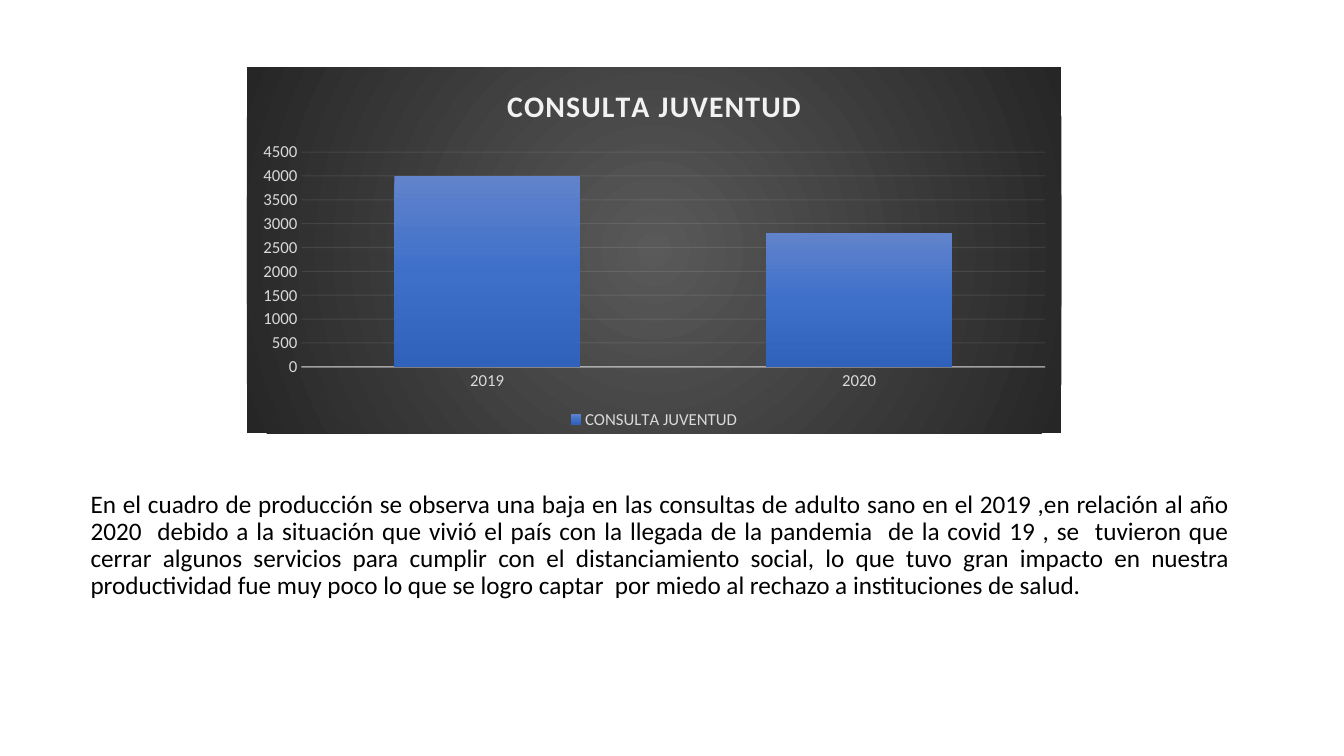
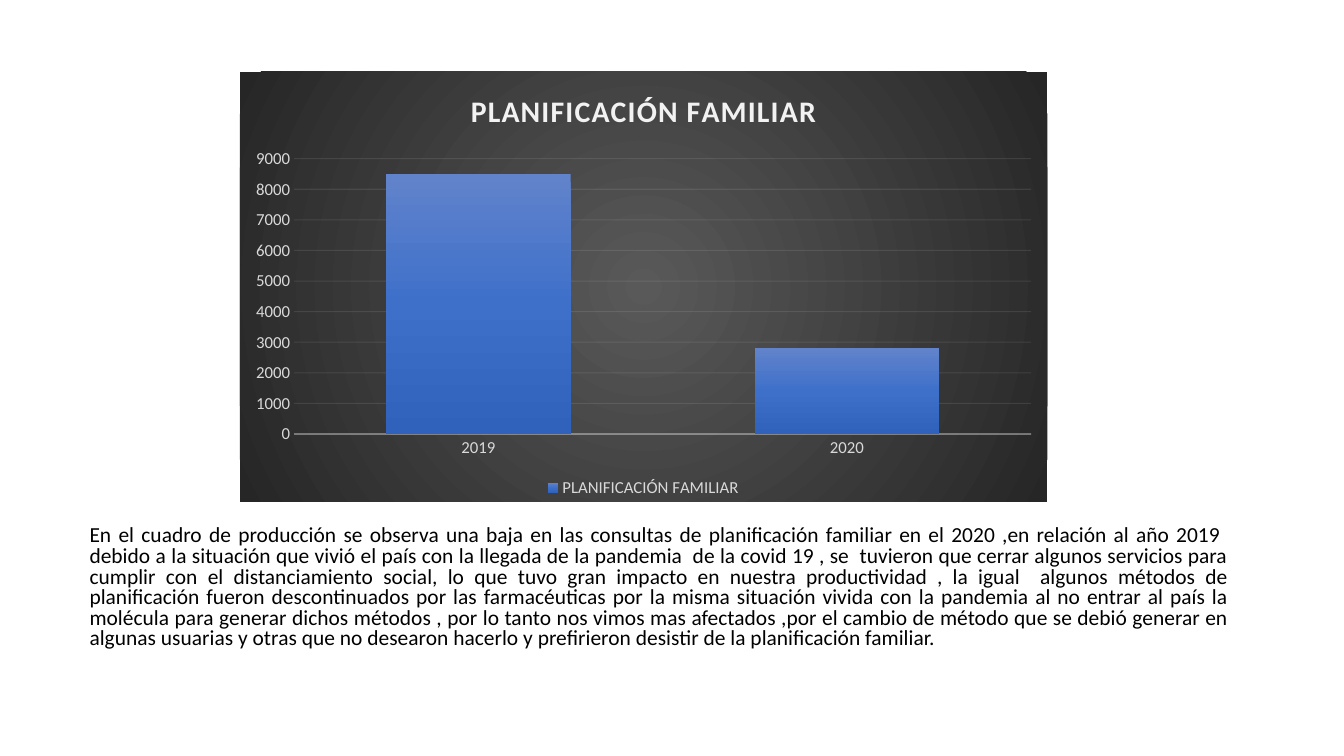
from lxml import etree
from pptx import Presentation
from pptx.chart.data import CategoryChartData
from pptx.dml.color import RGBColor
from pptx.enum.chart import XL_CHART_TYPE, XL_LEGEND_POSITION, XL_TICK_MARK
from pptx.enum.text import MSO_ANCHOR, PP_ALIGN
from pptx.oxml import parse_xml
from pptx.oxml.ns import nsdecls, qn
from pptx.util import Pt

COLUMNS = XL_CHART_TYPE.COLUMN_CLUSTERED
BOTTOM = XL_LEGEND_POSITION.BOTTOM
NO_TICK = XL_TICK_MARK.NONE
MIDDLE = MSO_ANCHOR.MIDDLE
JUSTIFY = PP_ALIGN.JUSTIFY

FONT = "Calibri"
COLORS = {
    "text": "000000",
    "label": "D9D9D9",
    "light": "F2F2F2",
    "panel_center": "595959",
    "panel_edge": "262626",
    "bar_top": "6183CB",
    "bar_middle": "3E70CA",
    "bar_bottom": "3062BB",
}
PANEL_STOPS = {0: "panel_center", 100: "panel_edge"}
PANEL_SHADE = (
    '<a:path path="circle">'
    '<a:fillToRect l="50000" t="50000" r="50000" b="50000"/></a:path>'
)
BAR_STOPS = {0: "bar_top", 50: "bar_middle", 100: "bar_bottom"}
BAR_SHADE = '<a:lin ang="5400000" scaled="0"/>'

SLIDES = [
    {
        "title": "CONSULTA JUVENTUD",
        "values": (4000, 2800),
        "maximum": 4500,
        "step": 500,
        "chart_at": (176.4, 48.2, 581.8, 261.4),
        "text_at": (57.6, 337.7, 828, 104.4),
        "size": 18,
        "spacing": 0.9,
        "text": (
            "En el cuadro de producción se observa una baja en las consultas "
            "de adulto sano en el 2019 ,en relación al año 2020  debido a la "
            "situación que vivió el país con la llegada de la pandemia  de la "
            "covid 19 , se  tuvieron que cerrar algunos servicios para cumplir "
            "con el distanciamiento social, lo que tuvo gran impacto en nuestra "
            "productividad fue muy poco lo que se logro captar  por miedo al "
            "rechazo a instituciones de salud."
        ),
    },
    {
        "title": "PLANIFICACIÓN FAMILIAR",
        "values": (8500, 2800),
        "maximum": 9000,
        "step": 1000,
        "chart_at": (171.4, 51.1, 576.7, 307.4),
        "text_at": (56.9, 367.9, 828, 104.4),
        "size": 15.3,
        "spacing": 0.8,
        "text": (
            "En el cuadro de producción se observa una baja en las consultas "
            "de planificación familiar en el 2020 ,en relación al año 2019  "
            "debido a la situación que vivió el país con la llegada de la "
            "pandemia  de la covid 19 , se  tuvieron que cerrar algunos "
            "servicios para cumplir con el distanciamiento social, lo que tuvo "
            "gran impacto en nuestra productividad , la igual  algunos métodos "
            "de planificación fueron descontinuados por las farmacéuticas por "
            "la misma situación vivida con la pandemia al no entrar al país la "
            "molécula para generar dichos métodos , por lo tanto nos vimos mas "
            "afectados ,por el cambio de método que se debió generar en algunas "
            "usuarias y otras que no desearon hacerlo y prefirieron desistir de "
            "la planificación familiar."
        ),
    },
]


def write_text(frame, text, *, size, color, bold=False, align=None, spacing=None):
    para = frame.paragraphs[0]
    para.alignment = align
    para.line_spacing = spacing
    span = para.add_run()
    span.text = text
    span.font.name = FONT
    span.font.size = Pt(size)
    span.font.bold = bold
    span.font.color.rgb = RGBColor.from_string(COLORS[color])


def make_gradient(stops, shade):
    marks = "".join(
        f'<a:gs pos="{position * 1000}"><a:srgbClr val="{COLORS[name]}"/></a:gs>'
        for position, name in stops.items()
    )
    return parse_xml(
        f'<a:gradFill {nsdecls("a")} rotWithShape="1">'
        f"<a:gsLst>{marks}</a:gsLst>{shade}</a:gradFill>"
    )


deck = Presentation()
deck.slide_width = Pt(960)
deck.slide_height = Pt(540)

for content in SLIDES:
    page = deck.slides.add_slide(deck.slide_layouts[6])

    data = CategoryChartData()
    data.categories = ["2019", "2020"]
    data.add_series(content["title"], content["values"])
    area = [Pt(length) for length in content["chart_at"]]
    chart = page.shapes.add_chart(COLUMNS, *area, data).chart
    chart.font.name = FONT
    chart.font.size = Pt(10)

    chart.has_title = True
    write_text(chart.chart_title.text_frame, content["title"],
               size=21.3, color="light", bold=True)
    chart.chart_title.include_in_layout = False
    chart.has_legend = True
    chart.legend.position = BOTTOM
    chart.legend.include_in_layout = False

    categories, amounts = chart.category_axis, chart.value_axis
    for axis in (categories, amounts):
        axis.major_tick_mark = NO_TICK
        axis.minor_tick_mark = NO_TICK
    for font in (categories.tick_labels.font, amounts.tick_labels.font, chart.legend.font):
        font.name = FONT
        font.size = Pt(12)
        font.color.rgb = RGBColor.from_string(COLORS["label"])
    amounts.minimum_scale = 0
    amounts.maximum_scale = content["maximum"]
    amounts.major_unit = content["step"]
    amounts.format.line.fill.background()
    for line, width in ((categories.format.line, 1), (amounts.major_gridlines.format.line, 0.75)):
        line.width = Pt(width)
        line.color.rgb = RGBColor.from_string(COLORS["light"])

    plot = chart.plots[0]
    plot.gap_width = 100
    plot.overlap = -24
    plot.vary_by_categories = False
    plot.series[0].format.fill.gradient()

    root = chart.element
    bar_fill = root.xpath(".//c:ser/c:spPr/a:gradFill")[0]
    bar_fill.getparent().replace(bar_fill, make_gradient(BAR_STOPS, BAR_SHADE))
    for place, opacity in (("c:catAx/c:spPr", 54), ("c:valAx/c:majorGridlines", 10)):
        for color in root.xpath(f".//{place}//a:srgbClr"):
            etree.SubElement(color, qn("a:alpha")).set("val", str(opacity * 1000))
    for properties in root.xpath(".//c:title//a:r/a:rPr"):
        properties.set("spc", "100")
    panel = parse_xml(f'<c:spPr {nsdecls("c", "a")}><a:ln><a:noFill/></a:ln></c:spPr>')
    panel.insert(0, make_gradient(PANEL_STOPS, PANEL_SHADE))
    root.find(qn("c:chart")).addnext(panel)

    box = page.shapes.add_textbox(*[Pt(length) for length in content["text_at"]])
    box.text_frame.word_wrap = True
    box.text_frame.vertical_anchor = MIDDLE
    write_text(box.text_frame, content["text"], size=content["size"], color="text",
               align=JUSTIFY, spacing=content["spacing"])

deck.save("out.pptx")
